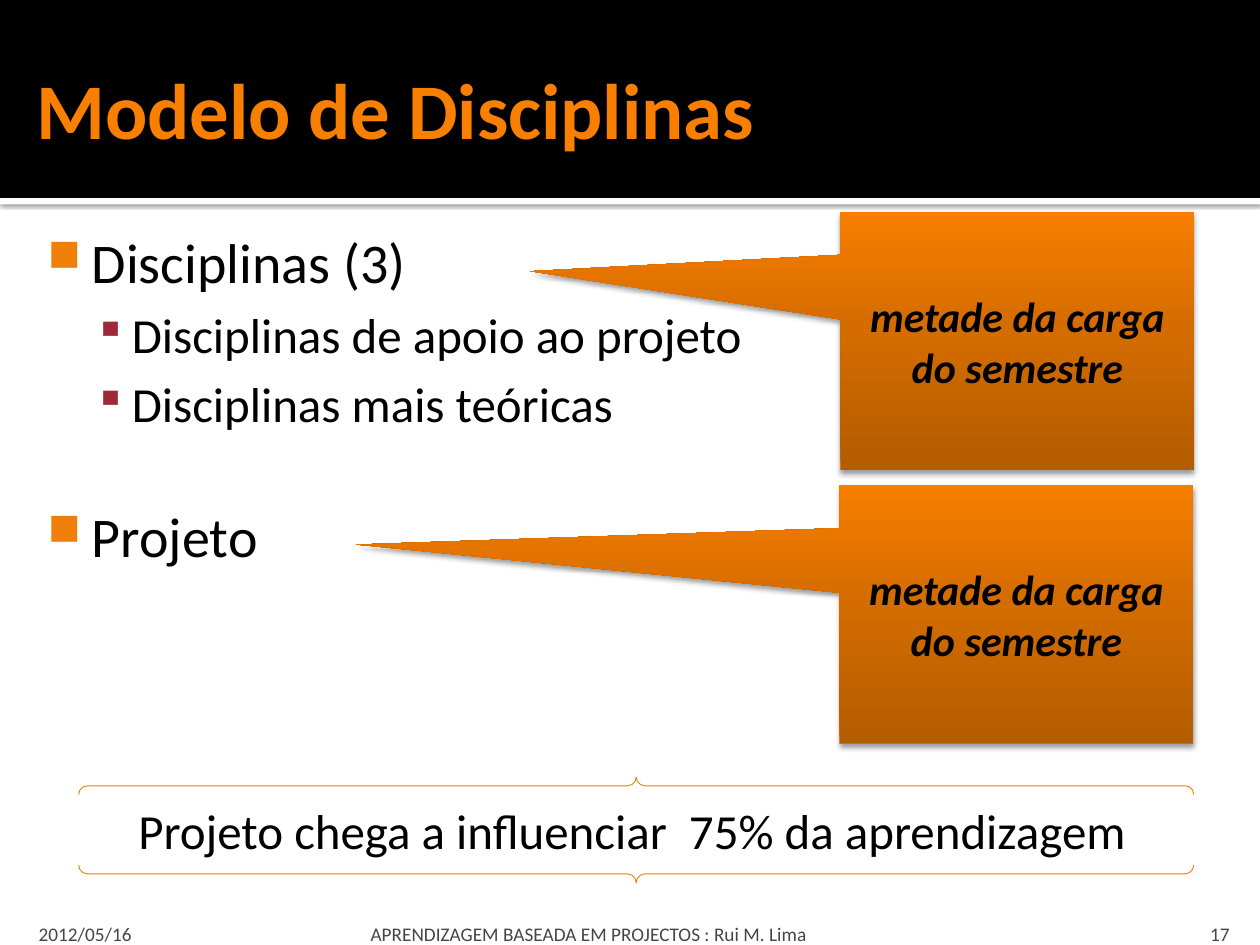
from copy import deepcopy

from pptx import Presentation
from pptx import util as u
from pptx.dml.color import RGBColor
from pptx.enum import shapes, text
from pptx.oxml import parse_xml
from pptx.oxml.ns import nsdecls, qn

BLACK = RGBColor(0x00, 0x00, 0x00)
WHITE = RGBColor(0xFF, 0xFF, 0xFF)
GREY = RGBColor(0x45, 0x45, 0x45)
ORANGE = RGBColor(0xF9, 0x7F, 0x00)
BRACE = RGBColor(0xF0, 0x7C, 0x03)
BULLET_1 = RGBColor(0xF0, 0x7F, 0x09)
BULLET_2 = RGBColor(0x9F, 0x29, 0x36)
GRADIENT = [(0, RGBColor(0xB4, 0x5C, 0x00)),
            (0.55, RGBColor(0xD4, 0x6C, 0x00)),
            (1, RGBColor(0xF7, 0x7E, 0x00))]

# level: indent, hanging, text size, bullet, bullet colour, bullet size %
LEVELS = [(1.22, -0.89, 32, "■", BULLET_1, 80),
          (2.03, -0.76, 28, "▪", BULLET_2, 90)]

MSO = shapes.MSO_SHAPE
ANCHOR = text.MSO_ANCHOR
ALIGN = text.PP_ALIGN


class Deck:
    font = "Calibri"

    def __init__(self, s):
        self.s = s

    def run(self, p, words, size, color=BLACK, bold=False, italic=False):
        r = p.add_run()
        r.text = words
        f = r.font
        f.name, f.size, f.color.rgb = self.font, u.Pt(size), color
        f.bold, f.italic = bold, italic

    def frame(self, box, insets, anchor):
        """Text box with insets left, top, right, bottom in cm."""
        tf = self.s.shapes.add_textbox(*map(u.Cm, box)).text_frame
        tf.word_wrap = True
        tf.vertical_anchor = anchor
        (tf.margin_left, tf.margin_top,
         tf.margin_right, tf.margin_bottom) = map(u.Cm, insets)
        return tf

    def label(self, box, words, size, color, insets, anchor=ANCHOR.BOTTOM,
              align=ALIGN.LEFT, bold=False):
        p = self.frame(box, insets, anchor).paragraphs[0]
        p.alignment = align
        self.run(p, words, size, color, bold)

    def bullets(self, box, items, insets):
        tf = self.frame(box, insets, ANCHOR.TOP)
        for i, (level, before, words) in enumerate(items):
            p = tf.add_paragraph() if i else tf.paragraphs[0]
            indent, hanging, size, char, color, percent = LEVELS[level]
            p.level = level
            p.space_before = u.Pt(before)
            pPr = p._p.get_or_add_pPr()
            pPr.set("marL", str(u.Cm(indent)))
            pPr.set("indent", str(u.Cm(hanging)))
            for xml in (f'<a:buClr {{}}><a:srgbClr val="{color}"/></a:buClr>',
                        f'<a:buSzPct {{}} val="{percent * 1000}"/>',
                        f'<a:buChar {{}} char="{char}"/>'):
                pPr.append(parse_xml(xml.format(nsdecls("a"))))
            self.run(p, words, size)

    def shape(self, kind, box, fill=None):
        sp = self.s.shapes.add_shape(kind, *map(u.Cm, box))
        sp.shadow.inherit = False
        sp.line.fill.background()
        if fill is None:
            sp.fill.background()
        else:
            sp.fill.solid()
            sp.fill.fore_color.rgb = fill
        return sp

    def shadow(self, sp, opacity, blur, distance):
        effects = sp._element.spPr.find(qn("a:effectLst"))
        effects.append(parse_xml(
            f'<a:outerShdw {nsdecls("a")} blurRad="{u.Pt(blur)}" '
            f'dist="{u.Pt(distance)}" dir="5400000" rotWithShape="0">'
            f'<a:srgbClr val="{BLACK}"><a:alpha val="{opacity * 1000}"/>'
            '</a:srgbClr></a:outerShdw>'))

    def callout(self, left, top, tip, words):
        sp = self.shape(MSO.RECTANGULAR_CALLOUT, (left, top, 7.14, 5.21))
        sp.adjustments[0], sp.adjustments[1] = tip, -0.27
        sp.fill.gradient()
        sp.fill.gradient_angle = 90
        stops = sp._element.spPr.find(qn("a:gradFill")).find(qn("a:gsLst"))
        stops.append(deepcopy(stops[-1]))
        for stop, (position, color) in zip(sp.fill.gradient_stops, GRADIENT):
            stop.position = position
            stop.color.rgb = color
        self.shadow(sp, 38, 3.1, 2)
        p = sp.text_frame.paragraphs[0]
        p.alignment = ALIGN.CENTER
        self.run(p, words, 24, bold=True, italic=True)

    def braces(self, box, words):
        """Brace pair turned on its side, with its text kept upright."""
        sp = self.shape(MSO.DOUBLE_BRACE, box)
        sp.rotation = 90
        sp.line.color.rgb = BRACE
        sp.line.width = u.Pt(0.5)
        tf = sp.text_frame
        tf._txBody.bodyPr.set("vert", "vert270")
        p = tf.paragraphs[0]
        p.alignment = ALIGN.CENTER
        self.run(p, words, 28)


def main():
    prs = Presentation()
    prs.slide_width, prs.slide_height = u.Cm(25.4), u.Cm(19.05)
    deck = Deck(prs.slides.add_slide(prs.slide_layouts[6]))

    # Title band
    rule = deck.shape(MSO.RECTANGLE, (0, 3.99, 25.4, 0.13), WHITE)
    deck.shadow(rule, 60, 2.5, 0.8)
    deck.shape(MSO.RECTANGLE, (0, 0, 25.4, 3.99), BLACK)
    deck.label((0.48, 0.43, 24.56, 3.48), "Modelo de Disciplinas", 45, ORANGE,
               (0.25, 0.13, 0.13, 0.13), ANCHOR.MIDDLE, bold=True)

    # Course list
    deck.bullets((0.48, 4.34, 24.56, 13.44), [
        (0, 0, "Disciplinas (3)"),
        (1, 5.6, "Disciplinas de apoio ao projeto"),
        (1, 5.6, "Disciplinas mais teóricas"),
        (0, 39.5, "Projeto"),
    ], (0.15, 0.25, 0.25, 0.13))

    # Workload callouts
    for left, top, tip in ((16.94, 4.27, -1.375), (16.92, 9.78, -1.864)):
        deck.callout(left, top, tip, "metade da carga do semestre")

    # Conclusion
    deck.braces((11.76, 5.49, 2.13, 22.48),
                "Projeto chega a influenciar  75% da aprendizagem")

    # Footer
    for left, width, words, inset, align in (
            (0.48, 6.73, "2012/05/16", 0.3, ALIGN.LEFT),
            (7.34, 15.29, "APRENDIZAGEM BASEADA EM PROJECTOS : Rui M. Lima",
             0.13, ALIGN.LEFT),
            (22.78, 2.26, "17", 0.25, ALIGN.RIGHT)):
        deck.label((left, 17.98, width, 1.07), words, 11, GREY,
                   (inset, 0.13, 0.25, 0), align=align)

    prs.save("out.pptx")


if __name__ == "__main__":
    main()
